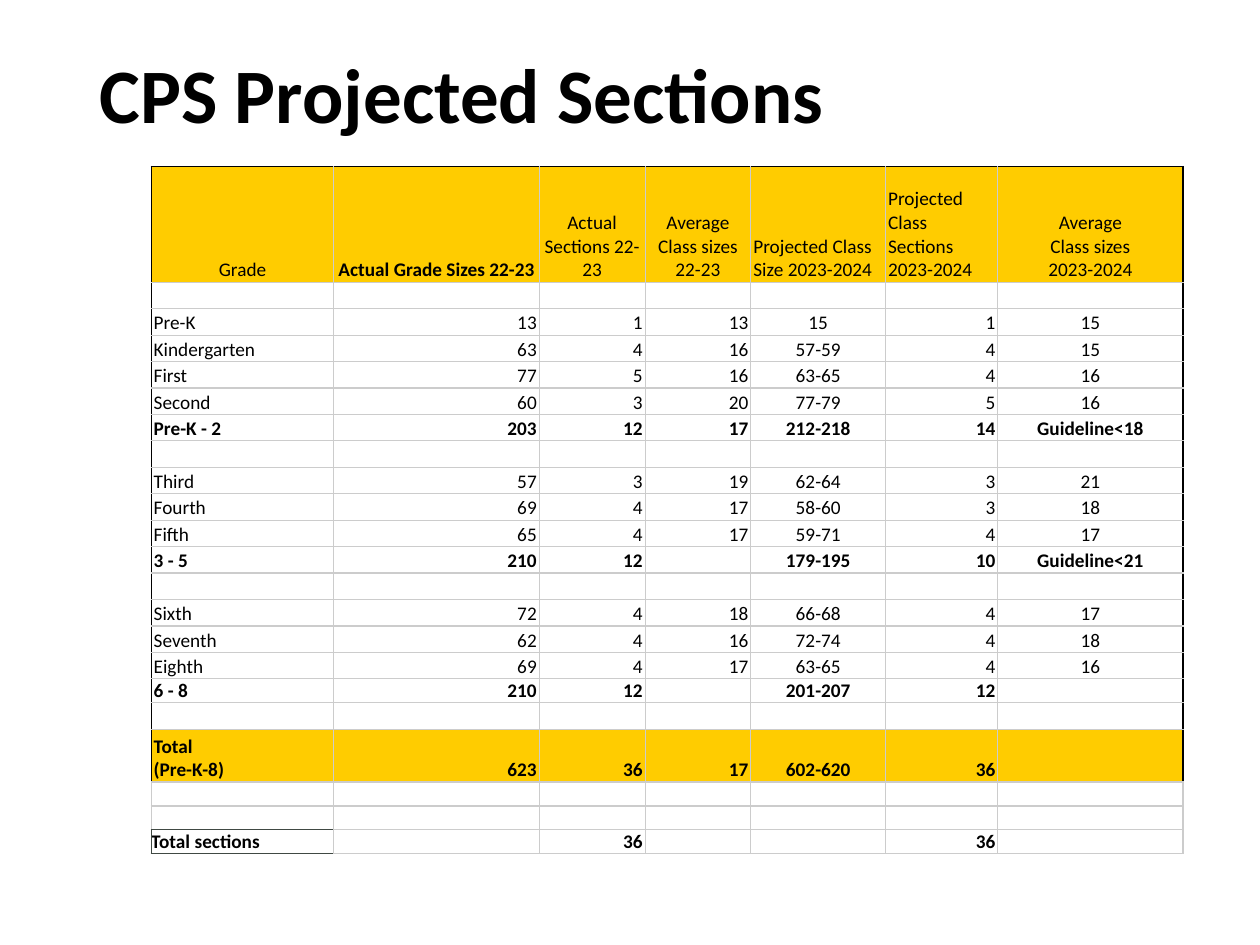
"""Build the slide of projected class sections by grade."""
from lxml.etree import SubElement
from pptx import Presentation
from pptx.dml.color import RGBColor
from pptx.enum.text import MSO_ANCHOR, PP_ALIGN
from pptx.oxml.ns import qn
from pptx.util import Inches, Pt

TITLE = "CPS Projected Sections"
HEADERS = ["Grade", "Actual Grade Sizes 22-23", "Actual Sections 22-23",
           "Average\nClass sizes\n22-23", "Projected Class Size 2023-2024",
           "Projected Class Sections 2023-2024", "Average\nClass sizes\n2023-2024"]
BLANK = [""] * 7
ROWS = [
    HEADERS,
    BLANK,
    ["Pre-K", "13", "1", "13", "15", "1", "15"],
    ["Kindergarten", "63", "4", "16", "57-59", "4", "15"],
    ["First", "77", "5", "16", "63-65", "4", "16"],
    ["Second", "60", "3", "20", "77-79", "5", "16"],
    ["Pre-K - 2", "203", "12", "17", "212-218", "14", "Guideline<18"],
    BLANK,
    ["Third", "57", "3", "19", "62-64", "3", "21"],
    ["Fourth", "69", "4", "17", "58-60", "3", "18"],
    ["Fifth", "65", "4", "17", "59-71", "4", "17"],
    ["3 - 5", "210", "12", "", "179-195", "10", "Guideline<21"],
    BLANK,
    ["Sixth", "72", "4", "18", "66-68", "4", "17"],
    ["Seventh", "62", "4", "16", "72-74", "4", "18"],
    ["Eighth", "69", "4", "17", "63-65", "4", "16"],
    ["6 - 8", "210", "12", "", "201-207", "12", ""],
    BLANK,
    ["Total\n(Pre-K-8)", "623", "36", "17", "602-620", "36", ""],
    BLANK,
    BLANK,
    ["Total sections", "", "36", "", "", "36", ""],
]
BOLD_LABELS = {"Pre-K - 2", "3 - 5", "6 - 8", "Total\n(Pre-K-8)", "Total sections"}
TOTAL_ROW, SECTIONS_ROW = 18, 21
COLUMN_WIDTHS = [1.45, 1.63, 0.84, 0.84, 1.07, 0.89, 1.47]
ROW_HEIGHTS = [0.92] + [0.21] * 15 + [0.19, 0.21, 0.42] + [0.19] * 3
ALIGNMENTS = {"l": PP_ALIGN.LEFT, "c": PP_ALIGN.CENTER, "r": PP_ALIGN.RIGHT}
HEADER_ALIGN, BODY_ALIGN = "ccccllc", "lrrrcrc"
GOLD, GRID, BLACK, SLATE = "FFCC00", "CCCCCC", "000000", "404943"


def color(hex_code):
    return RGBColor.from_string(hex_code)


def style_font(font, size, bold):
    font.name, font.size, font.bold = "Calibri", Pt(size), bold
    font.color.rgb = color(BLACK)


def border_colors(row, column):
    edges = dict.fromkeys("LRTB", GRID)
    if row <= TOTAL_ROW:
        if column == 0:
            edges["L"] = BLACK
        if column == len(HEADERS) - 1:
            edges["R"] = BLACK
    if row == 0:
        edges["T"] = BLACK
    if column == 0 and row == SECTIONS_ROW:
        edges.update(L=SLATE, T=SLATE, B=SLATE)
    if column == 0 and row == SECTIONS_ROW - 1:
        edges["B"] = SLATE
    return edges


def draw_borders(cell, edges):
    properties = cell._tc.get_or_add_tcPr()
    for side, hex_code in edges.items():
        line = SubElement(properties, qn(f"a:ln{side}"), w=str(Pt(0.75)))
        SubElement(SubElement(line, qn("a:solidFill")), qn("a:srgbClr"), val=hex_code)


def write_cell(cell, text, align, bold):
    paragraph = cell.text_frame.paragraphs[0]
    paragraph.alignment = ALIGNMENTS[align]
    if not text:
        SubElement(paragraph._p, qn("a:endParaRPr"), sz="1100")
        return
    for index, words in enumerate(text.split("\n")):
        if index:
            paragraph.add_line_break()
        run = paragraph.add_run()
        run.text = words
        style_font(run.font, 11, bold)


def add_title(slide):
    title = slide.shapes.title
    title.left, title.top = Inches(0.69), Inches(0.4)
    title.width, title.height = Inches(8.62), Inches(0.76)
    title.text_frame.vertical_anchor = MSO_ANCHOR.MIDDLE
    paragraph = title.text_frame.paragraphs[0]
    paragraph.alignment, paragraph.line_spacing = PP_ALIGN.LEFT, 0.9
    run = paragraph.add_run()
    run.text = TITLE
    style_font(run.font, 44, True)


def add_sections_table(slide):
    table = slide.shapes.add_table(
        len(ROWS), len(HEADERS), Inches(1.2), Inches(1.32),
        Inches(sum(COLUMN_WIDTHS)), Inches(sum(ROW_HEIGHTS))).table
    table.first_row = table.horz_banding = False
    for column, width in zip(table.columns, COLUMN_WIDTHS):
        column.width = Inches(width)
    for table_row, height in zip(table.rows, ROW_HEIGHTS):
        table_row.height = Inches(height)

    for row, texts in enumerate(ROWS):
        aligns = BODY_ALIGN if row else HEADER_ALIGN
        for column, (text, align) in enumerate(zip(texts, aligns)):
            cell = table.cell(row, column)
            inset = 0 if (row, column) == (SECTIONS_ROW, 0) else 0.02
            cell.margin_left = cell.margin_right = Inches(inset)
            cell.margin_top = cell.margin_bottom = 0
            cell.vertical_anchor = MSO_ANCHOR.BOTTOM
            draw_borders(cell, border_colors(row, column))
            if row in (0, TOTAL_ROW):
                cell.fill.solid()
                cell.fill.fore_color.rgb = color(GOLD)
            else:
                cell.fill.background()
            bold = texts[0] in BOLD_LABELS or (row, column) == (0, 1)
            write_cell(cell, text, align, bold)


def main():
    presentation = Presentation()
    presentation.slide_width, presentation.slide_height = Inches(10), Inches(7.5)
    slide = presentation.slides.add_slide(presentation.slide_layouts[5])
    add_title(slide)
    add_sections_table(slide)
    presentation.save("out.pptx")


if __name__ == "__main__":
    main()
